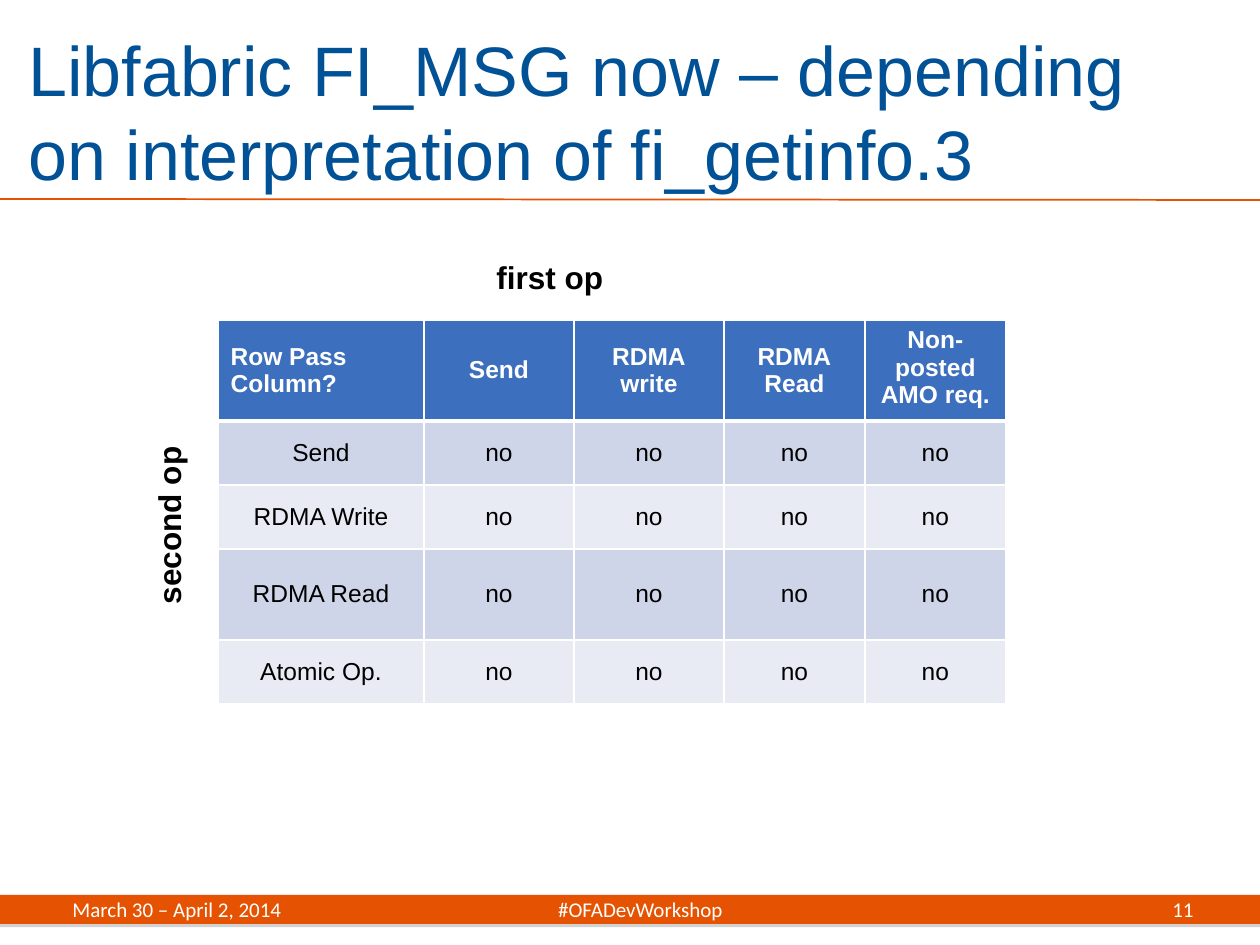
from lxml.etree import SubElement
from pptx import Presentation
from pptx.dml.color import RGBColor
from pptx.enum.shapes import MSO_CONNECTOR as Conn, MSO_SHAPE as Shape
from pptx.enum.text import MSO_ANCHOR as Anchor, PP_ALIGN as Align
from pptx.oxml import parse_xml
from pptx.oxml.ns import nsdecls, qn
from pptx.util import Emu, Pt

PX_PER_INCH = 126


class Theme:
    orange = "E55302"
    title = "005195"
    header = "3C6FBD"
    bands = ("CED5E8", "E8EBF4")
    white = "FFFFFF"
    black = "000000"
    sans, footer_font = "Arial", "Calibri"
    title_pt, label_pt, cell_pt, footer_pt = 40, 18, 14, 12


COLS = (206, 150, 150, 141, 141)
ROWS = (91, 64, 64, 91, 64)
HEADER = ("Row Pass Column?", "Send", "RDMA\vwrite", "RDMA\vRead",
          "Non-posted AMO req.")
OPS = ("Send", "RDMA Write", "RDMA Read", "Atomic Op.")


def px(n):
    return Emu(round(n * 914400 / PX_PER_INCH))


def rgb(value):
    return RGBColor.from_string(value)


def set_text(tf, text, color, size, name=Theme.sans, bold=False, align=None):
    tf.text = text
    p = tf.paragraphs[0]
    p.alignment = align
    for r in p.runs:
        for key, value in dict(name=name, size=Pt(size), bold=bold).items():
            setattr(r.font, key, value)
        r.font.color.rgb = rgb(color)
    return p


def add_text(slide, box, text, color, size, anchor=Anchor.TOP, **fmt):
    sp = slide.shapes.add_textbox(*map(px, box))
    tf = sp.text_frame
    tf.word_wrap = True
    tf.vertical_anchor = anchor
    set_text(tf, text, color, size, **fmt)
    return sp


def add_title(slide, x, y, w, h):
    add_text(slide, (x + 16, y + 32, 1158, 157),
             "Libfabric FI_MSG now – depending on interpretation of fi_getinfo.3",
             Theme.title, Theme.title_pt, Anchor.MIDDLE)
    # Rule under the title
    rule = slide.shapes.add_connector(
        Conn.STRAIGHT, px(x), px(y + h - 1), px(x + w), px(y + h))
    rule.line.color.rgb = rgb(Theme.orange)
    rule.line.width = Pt(1)
    SubElement(rule._element.spPr, qn("a:effectLst"))


def add_borders(cell, bottom_pt):
    tc_pr = cell._tc.get_or_add_tcPr()
    widths = dict(lnL=1, lnR=1, lnT=1, lnB=bottom_pt)
    for i, (tag, width) in enumerate(widths.items()):
        tc_pr.insert(i, parse_xml(
            f'<a:{tag} {nsdecls("a")} w="{Pt(width)}"><a:solidFill>'
            f'<a:srgbClr val="{Theme.white}"/></a:solidFill></a:{tag}>'))


def add_table(slide, x, y):
    frame = slide.shapes.add_table(len(ROWS), len(COLS), px(x), px(y),
                                   px(sum(COLS)), px(sum(ROWS)))
    table = frame.table
    for col, width in zip(table.columns, COLS):
        col.width = px(width)
    for row, height in zip(table.rows, ROWS):
        row.height = px(height)

    rows = [HEADER] + [(op,) + ("no",) * len(OPS) for op in OPS]
    for i, row in enumerate(rows):
        head = i == 0
        for j, text in enumerate(row):
            cell = table.cell(i, j)
            corner, last = head and j == 0, head and j == len(COLS) - 1
            cell.vertical_anchor = Anchor.TOP if last else Anchor.MIDDLE
            cell.fill.solid()
            cell.fill.fore_color.rgb = rgb(
                Theme.header if head else Theme.bands[(i - 1) % 2])
            set_text(cell.text_frame, text,
                     Theme.white if head else Theme.black, Theme.cell_pt,
                     bold=head, align=Align.LEFT if corner else Align.CENTER)
            add_borders(cell, 3 if head else 1)


def add_matrix(slide, x, y):
    add_table(slide, x + 218, y + 68)
    # Axis labels
    label = dict(color=Theme.black, size=Theme.label_pt, bold=True)
    add_text(slide, (x + 484, y, 433, 52), "first op", **label)
    side = add_text(slide, (x - 47, y + 122, 433, 52), "second op", **label)
    side.rotation = 270


def add_footer(slide, x, y, w, h):
    bar = slide.shapes.add_shape(Shape.RECTANGLE, *map(px, (x, y, w, h)))
    bar.fill.solid()
    bar.fill.fore_color.rgb = rgb(Theme.orange)
    bar.line.fill.background()
    bar._element.spPr.append(parse_xml(
        f'<a:effectLst {nsdecls("a")}><a:outerShdw dist="{Pt(1.8)}" '
        'dir="5400000" rotWithShape="0"><a:srgbClr val="808080">'
        '<a:alpha val="35000"/></a:srgbClr></a:outerShdw></a:effectLst>'))

    # Date and hashtag share one line, split by a centred tab
    style = dict(color=Theme.white, size=Theme.footer_pt,
                 anchor=Anchor.MIDDLE, name=Theme.footer_font)
    sp = add_text(slide, (x + 60, y, 1140, h),
                  "March 30 – April 2, 2014\t#OFADevWorkshop", **style)
    p_pr = sp.text_frame.paragraphs[0]._p.get_or_add_pPr()
    tabs = SubElement(p_pr, qn("a:tabLst"))
    SubElement(tabs, qn("a:tab"), pos=str(px(568)), algn="ctr")
    # Slide number
    add_text(slide, (x + 1056, y, 150, h), "11", align=Align.RIGHT, **style)


def main():
    prs = Presentation()
    prs.slide_width, prs.slide_height = px(1260), px(945)
    slide = prs.slides.add_slide(prs.slide_layouts[6])
    add_footer(slide, 0, 895, 1260, 29)
    add_title(slide, 0, 0, 1260, 200)
    add_matrix(slide, 0, 252)
    prs.save("out.pptx")


if __name__ == "__main__":
    main()
